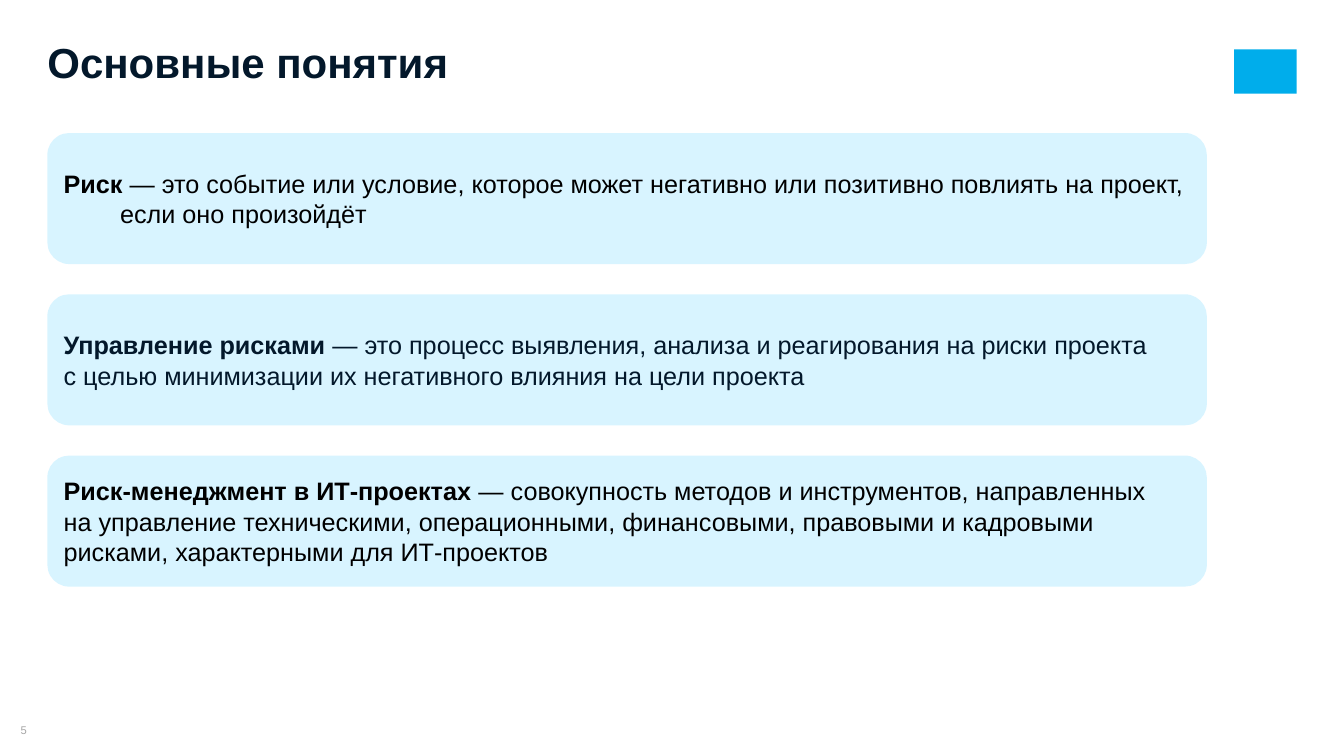
from dataclasses import dataclass

from lxml import etree
from pptx import Presentation
from pptx.dml.color import RGBColor
from pptx.enum.shapes import MSO_SHAPE
from pptx.enum.text import MSO_ANCHOR, PP_ALIGN
from pptx.oxml.ns import qn
from pptx.util import Inches, Pt

ROUND, RECT = MSO_SHAPE.ROUNDED_RECTANGLE, MSO_SHAPE.RECTANGLE
TOP, MIDDLE = MSO_ANCHOR.TOP, MSO_ANCHOR.MIDDLE
LEFT, CENTER = PP_ALIGN.LEFT, PP_ALIGN.CENTER
TITLE_ONLY = 5


@dataclass(frozen=True)
class Theme:
    font: str = "Arial"
    ink: str = "03182B"
    black: str = "000000"
    gray: str = "A6A6A6"
    card: str = "C8F0FF"
    accent: str = "00ADEB"
    alpha: int = 70
    title: int = 30
    body: int = 18
    small: int = 8


THEME = Theme()
WIDTH, HEIGHT = 13.33, 7.5
MARGIN = 0.47
CARD_TOP, CARD_W, CARD_H, GAP = 1.32, 11.5, 1.3, 0.3

# Term, lines of its definition, colour, hanging indent
TERMS = [
    ("Риск",
     [" — это событие или условие, которое может негативно или позитивно "
      "повлиять на проект, если оно произойдёт"],
     THEME.black, 0.56),
    ("Управление рисками",
     [" — это процесс выявления, анализа и реагирования на риски проекта",
      "с целью минимизации их негативного влияния на цели проекта"],
     THEME.ink, 0),
    ("Риск-менеджмент в ИТ-проектах",
     [" — совокупность методов и инструментов, направленных",
      "на управление техническими, операционными, финансовыми, правовыми "
      "и кадровыми рисками, характерными для ИТ-проектов"],
     THEME.black, 0),
]


def place(shape, box):
    shape.left, shape.top, shape.width, shape.height = map(Inches, box)


def write(para, text, size=THEME.body, color=THEME.ink, bold=False):
    run = para.add_run()
    run.text = text
    font = run.font
    font.name, font.size, font.bold = THEME.font, Pt(size), bold
    font.color.rgb = RGBColor.from_string(color)


def frame(shape, anchor=MIDDLE, align=LEFT, inset=None):
    """Set up the text frame and return its first paragraph."""
    body = shape.text_frame
    body.word_wrap = True
    body.vertical_anchor = anchor
    if inset is not None:
        body.margin_left = body.margin_right = Inches(inset)
        body.margin_top = body.margin_bottom = Inches(inset)
    para = body.paragraphs[0]
    para.alignment = align
    return para


def block(slide, kind, box, color, alpha=100):
    shape = slide.shapes.add_shape(kind, *map(Inches, box))
    shape.shadow.inherit = False
    shape.line.fill.background()
    shape.fill.solid()
    shape.fill.fore_color.rgb = RGBColor.from_string(color)
    if alpha < 100:
        tone = shape._element.spPr.find(".//" + qn("a:srgbClr"))
        etree.SubElement(tone, qn("a:alpha"), val=str(alpha * 1000))
    return shape


def heading(slide, box, text):
    title = slide.shapes.title
    place(title, box)
    para = frame(title, anchor=TOP, inset=0)
    para.line_spacing = 0.8
    write(para, text, size=THEME.title, bold=True)


def card(slide, box, term, lines, color, hang):
    shape = block(slide, ROUND, box, THEME.card, THEME.alpha)
    para = frame(shape)
    if hang:
        props = para._p.get_or_add_pPr()
        props.set("marL", str(Inches(hang)))
        props.set("indent", str(-Inches(hang)))
    write(para, term, color=color, bold=True)
    for row, line in enumerate(lines):
        if row:
            para.add_line_break()
        write(para, line, color=color)


def cards(slide, box):
    """Stack the definitions from the top of the box at equal gaps."""
    left, top, width, height = box
    step = (height + GAP) / len(TERMS)
    for row, term in enumerate(TERMS):
        card(slide, (left, top + row * step, width, step - GAP), *term)


def number(slide, box, text):
    shape = slide.shapes.add_textbox(*map(Inches, box))
    para = frame(shape, align=CENTER, inset=0)
    write(para, text, size=THEME.small, color=THEME.gray)


def main():
    deck = Presentation()
    deck.slide_width, deck.slide_height = Inches(WIDTH), Inches(HEIGHT)
    slide = deck.slides.add_slide(deck.slide_layouts[TITLE_ONLY])
    block(slide, RECT, (12.24, 0.49, 0.62, 0.44), THEME.accent)
    number(slide, (0, 7.18, MARGIN, 0.13), "5")
    heading(slide, (MARGIN, 0.46, 10.51, 0.41), "Основные понятия")
    stack = len(TERMS) * (CARD_H + GAP) - GAP
    cards(slide, (MARGIN, CARD_TOP, CARD_W, stack))
    deck.save("out.pptx")


if __name__ == "__main__":
    main()
